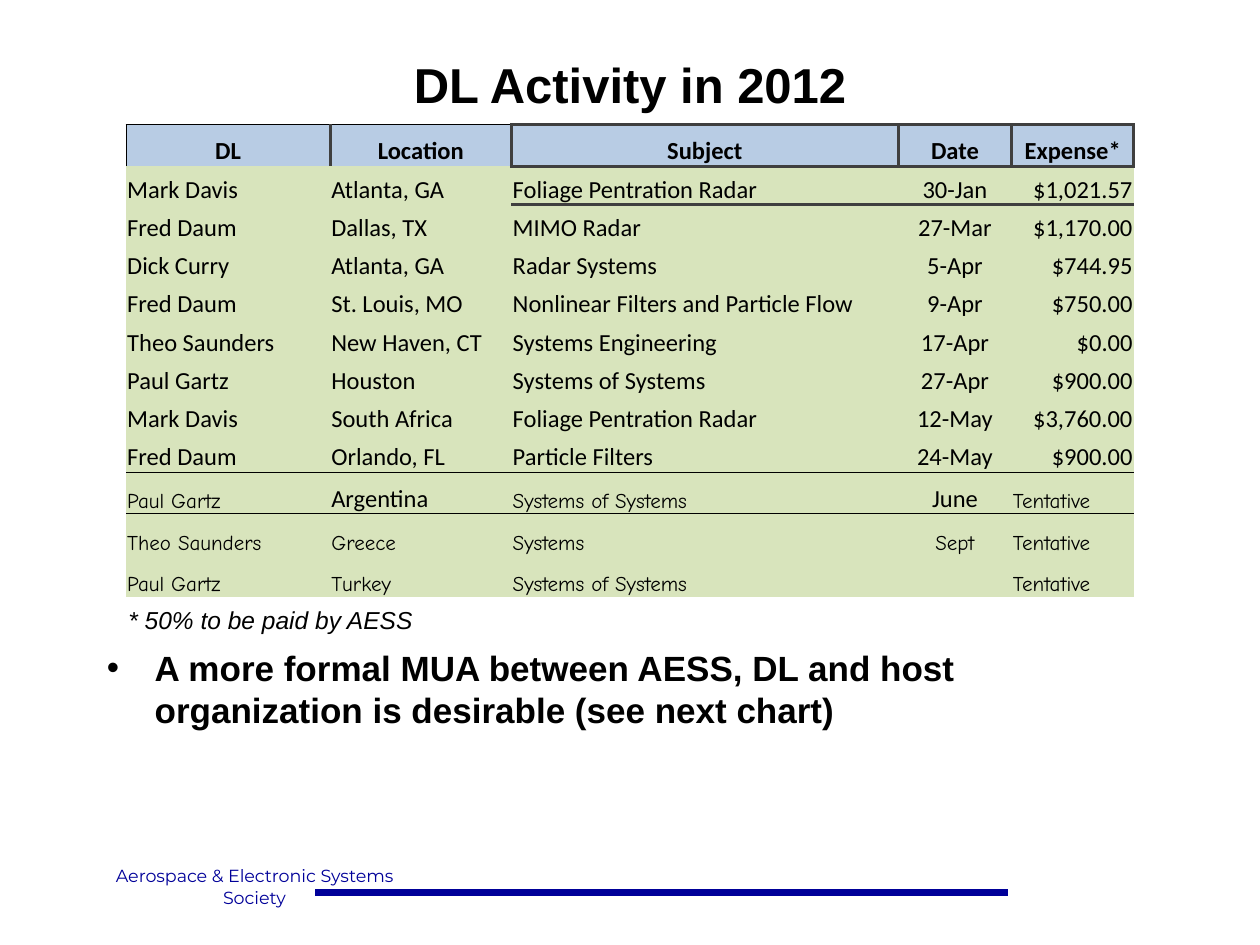
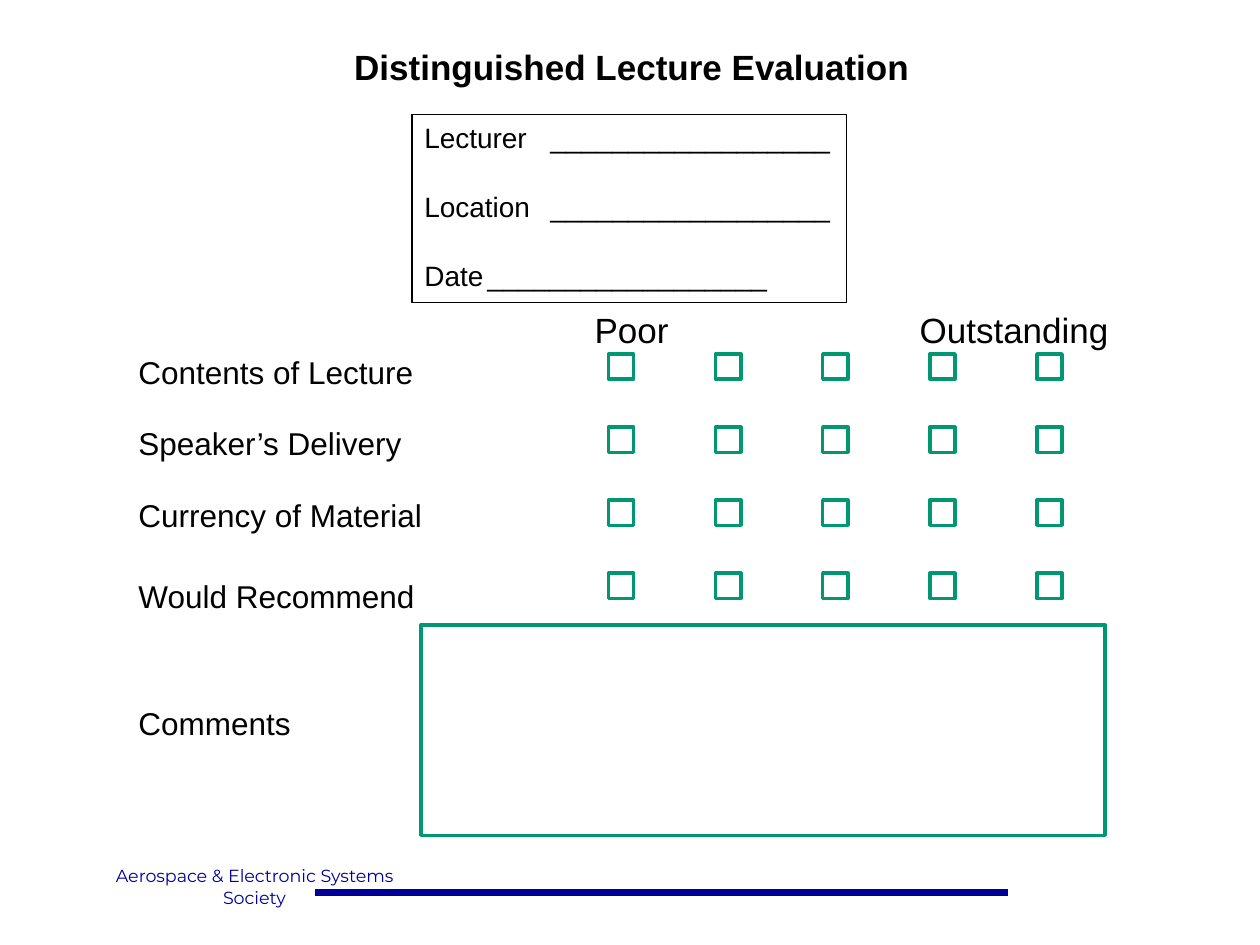
from lxml import etree
from pptx import Presentation
from pptx.dml.color import RGBColor
from pptx.enum.shapes import MSO_CONNECTOR, MSO_SHAPE
from pptx.enum.text import MSO_ANCHOR, PP_ALIGN
from pptx.oxml.ns import qn
from pptx.util import Inches, Pt

LEFT, CENTER, RIGHT = PP_ALIGN.LEFT, PP_ALIGN.CENTER, PP_ALIGN.RIGHT
TOP, MIDDLE, BOTTOM = MSO_ANCHOR.TOP, MSO_ANCHOR.MIDDLE, MSO_ANCHOR.BOTTOM
RECTANGLE, STRAIGHT = MSO_SHAPE.RECTANGLE, MSO_CONNECTOR.STRAIGHT

BLACK = RGBColor(0x00, 0x00, 0x00)
NAVY = RGBColor(0x00, 0x00, 0x99)
GREEN = RGBColor(0x00, 0x97, 0x71)
HEADER_BLUE = RGBColor(0xB8, 0xCC, 0xE4)
ROW_GREEN = RGBColor(0xD8, 0xE4, 0xBC)
GRAY = RGBColor(0x3F, 0x3F, 0x3F)

NO_STYLE = "{2D5ABB26-0587-4C30-8999-92F81FD0307C}"
THIN, THICK = (BLACK, 0.5), (GRAY, 2)
SIDES = ("L", "R", "T", "B")

COLUMN_WIDTHS = [1.62, 1.44, 3.07, 0.9, 0.97]
TABLE_HEIGHT, TALL_ROW = 3.75, 0.33
HEADINGS = ["DL", "Location", "Subject", "Date", "Expense*"]
HEADING_BORDERS = [
    dict(L=THIN, R=THICK, T=THIN),
    dict(L=THICK, R=THICK, T=THIN),
] + [dict.fromkeys(SIDES, THICK)] * 3
HELD = [
    ["Mark Davis", "Atlanta, GA", "Foliage Pentration Radar", "30-Jan", "$1,021.57"],
    ["Fred Daum", "Dallas, TX", "MIMO Radar", "27-Mar", "$1,170.00"],
    ["Dick Curry", "Atlanta, GA", "Radar Systems", "5-Apr", "$744.95"],
    ["Fred Daum", "St. Louis, MO", "Nonlinear Filters and Particle Flow", "9-Apr", "$750.00"],
    ["Theo Saunders", "New Haven, CT", "Systems Engineering", "17-Apr", "$0.00"],
    ["Paul Gartz", "Houston", "Systems of Systems", "27-Apr", "$900.00"],
    ["Mark Davis", "South Africa", "Foliage Pentration Radar", "12-May", "$3,760.00"],
    ["Fred Daum", "Orlando, FL", "Particle Filters", "24-May", "$900.00"],
]
TENTATIVE = [
    ["Paul Gartz", "Argentina", "Systems of Systems", "June", "Tentative"],
    ["Theo Saunders", "Greece", "Systems", "Sept", "Tentative"],
    ["Paul Gartz", "Turkey", "Systems of Systems", "", "Tentative"],
]
CONFIRMED = ("Argentina", "June")

CRITERIA = [("Contents of Lecture", 2.75), ("Speaker’s Delivery", 3.32),
            ("Currency of Material", 3.89), ("Would Recommend", 4.53)]


def add_bullet(p, indent):
    pPr = p._p.get_or_add_pPr()
    pPr.set("marL", str(Inches(indent)))
    pPr.set("indent", str(-Inches(indent)))
    etree.SubElement(pPr, qn("a:buFont")).set("typeface", "Arial")
    etree.SubElement(pPr, qn("a:buChar")).set("char", "•")


def write_text(tf, text, size=18, font="Arial", color=BLACK, bold=False,
               italic=False, align=LEFT, gap=0, bullet=None):
    for i, line in enumerate(text.split("\n")):
        p = tf.add_paragraph() if i else tf.paragraphs[0]
        p.alignment = align
        if i and gap:
            p.space_before = Pt(gap)
        if bullet:
            add_bullet(p, bullet)
        r = p.add_run()
        r.text = line
        r.font.size, r.font.name = Pt(size), font
        r.font.bold, r.font.italic = bold, italic
        r.font.color.rgb = color


def add_text(s, x, y, w, h, text, wrap=True, anchor=TOP, **fmt):
    tf = s.shapes.add_textbox(Inches(x), Inches(y), Inches(w), Inches(h)).text_frame
    tf.word_wrap, tf.vertical_anchor = wrap, anchor
    write_text(tf, text, **fmt)


def add_title(s, x, y, w, text, size):
    add_text(s, x, y, w, 0.67, text, size=size, bold=True, align=CENTER, anchor=MIDDLE)


def add_outline(s, x, y, w, h, color=GREEN, width=2):
    sp = s.shapes.add_shape(RECTANGLE, Inches(x), Inches(y), Inches(w), Inches(h))
    sp.shadow.inherit = False
    sp.fill.background()
    sp.line.color.rgb, sp.line.width = color, Pt(width)
    return sp


def add_footer(s):
    rule = s.shapes.add_connector(STRAIGHT, Inches(2.5), Inches(7.08), Inches(8), Inches(7.08))
    rule.line.color.rgb, rule.line.width = NAVY, Pt(4)
    etree.SubElement(rule._element.spPr, qn("a:effectLst"))
    add_text(s, 0.67, 6.82, 2.7, 0.43, "Aerospace & Electronic Systems\nSociety",
             wrap=False, size=10, font="Montserrat", color=NAVY, align=CENTER)


def set_borders(cell, borders):
    tcPr = cell._tc.get_or_add_tcPr()
    for i, side in enumerate(side for side in SIDES if side in borders):
        color, width = borders[side]
        ln = etree.Element(qn(f"a:ln{side}"), w=str(Pt(width)))
        fill = etree.SubElement(ln, qn("a:solidFill"))
        etree.SubElement(fill, qn("a:srgbClr")).set("val", str(color))
        tcPr.insert(i, ln)


def fill_cell(cell, text, fill, borders, **fmt):
    cell.margin_left = cell.margin_right = cell.margin_top = Inches(0.01)
    cell.margin_bottom = 0
    cell.vertical_anchor = BOTTOM
    cell.fill.solid()
    cell.fill.fore_color.rgb = fill
    set_borders(cell, borders)
    if text:
        write_text(cell.text_frame, text, **fmt)


def add_activity_table(s):
    rows = [HEADINGS] + HELD + TENTATIVE
    frame = s.shapes.add_table(len(rows), len(HEADINGS), Inches(1), Inches(0.99),
                               Inches(8), Inches(TABLE_HEIGHT))
    table = frame.table
    table.first_row = table.horz_banding = False
    next(frame._element.iter(qn("a:tableStyleId"))).text = NO_STYLE
    for column, width in zip(table.columns, COLUMN_WIDTHS):
        column.width = Inches(width)
    held_row = (TABLE_HEIGHT - TALL_ROW * (1 + len(TENTATIVE))) / len(HELD)
    last_held = len(HELD)
    for i, row in enumerate(rows):
        is_held = 1 <= i <= last_held
        table.rows[i].height = Inches(held_row if is_held else TALL_ROW)
        for j, text in enumerate(row):
            cell = table.cell(i, j)
            if i == 0:
                fill_cell(cell, text, HEADER_BLUE, HEADING_BORDERS[j], size=14,
                          font="Calibri", bold=True, align=CENTER)
                continue
            borders = {}
            if i == 1 and j >= 2:
                borders["T"] = THICK
            elif i == last_held:
                borders["B"] = THIN
            elif i == last_held + 1:
                borders["T"] = THIN
            plain = is_held or text in CONFIRMED
            align = CENTER if j == 3 else RIGHT if j == 4 and is_held else LEFT
            fill_cell(cell, text, ROW_GREEN, borders, size=14 if plain else 12,
                      font="Calibri" if plain else "Comic Neue", align=align)


def build_activity(s):
    add_footer(s)
    add_title(s, 0.75, 0.33, 8.5, "DL Activity in 2012", 28)
    add_text(s, 0.75, 5.08, 8.5, 1.25,
             "A more formal MUA between AESS, DL and host organization is desirable "
             "(see next chart)", size=20, bold=True, bullet=0.38)
    add_text(s, 0.92, 4.75, 2.47, 0.34, "* 50% to be paid by AESS", wrap=False,
             size=14, italic=True)
    add_activity_table(s)


def build_evaluation(s):
    add_footer(s)
    add_title(s, 0.03, 0.19, 9.97, "Distinguished Lecture Evaluation", 20)
    add_text(s, 4.62, 2.4, 0.79, 0.44, "Poor", wrap=False, size=20)
    add_text(s, 7.2, 2.4, 1.71, 0.44, "Outstanding", wrap=False, size=20)
    for i, (criterion, y) in enumerate(CRITERIA):
        add_text(s, 1, y, 3.62, 0.4, criterion)
        for j in range(5):
            add_outline(s, 4.83 + 0.85 * j, 2.81 + 0.58 * i, 0.2, 0.2)
    add_text(s, 1, 5.54, 1.42, 0.4, "Comments", wrap=False)
    add_outline(s, 3.34, 4.96, 5.43, 1.67)
    form = add_outline(s, 3.27, 0.91, 3.45, 1.49, BLACK, 0.75)
    form.text_frame.vertical_anchor = TOP
    blank = "_" * 18
    write_text(form.text_frame,
               "\n".join(f"{field}\t{blank}" for field in ("Lecturer", "Location", "Date")),
               size=16, gap=20)


def main():
    prs = Presentation()
    prs.slide_width, prs.slide_height = Inches(10), Inches(7.5)
    for build in (build_activity, build_evaluation):
        build(prs.slides.add_slide(prs.slide_layouts[6]))
    prs.save("out.pptx")


if __name__ == "__main__":
    main()
